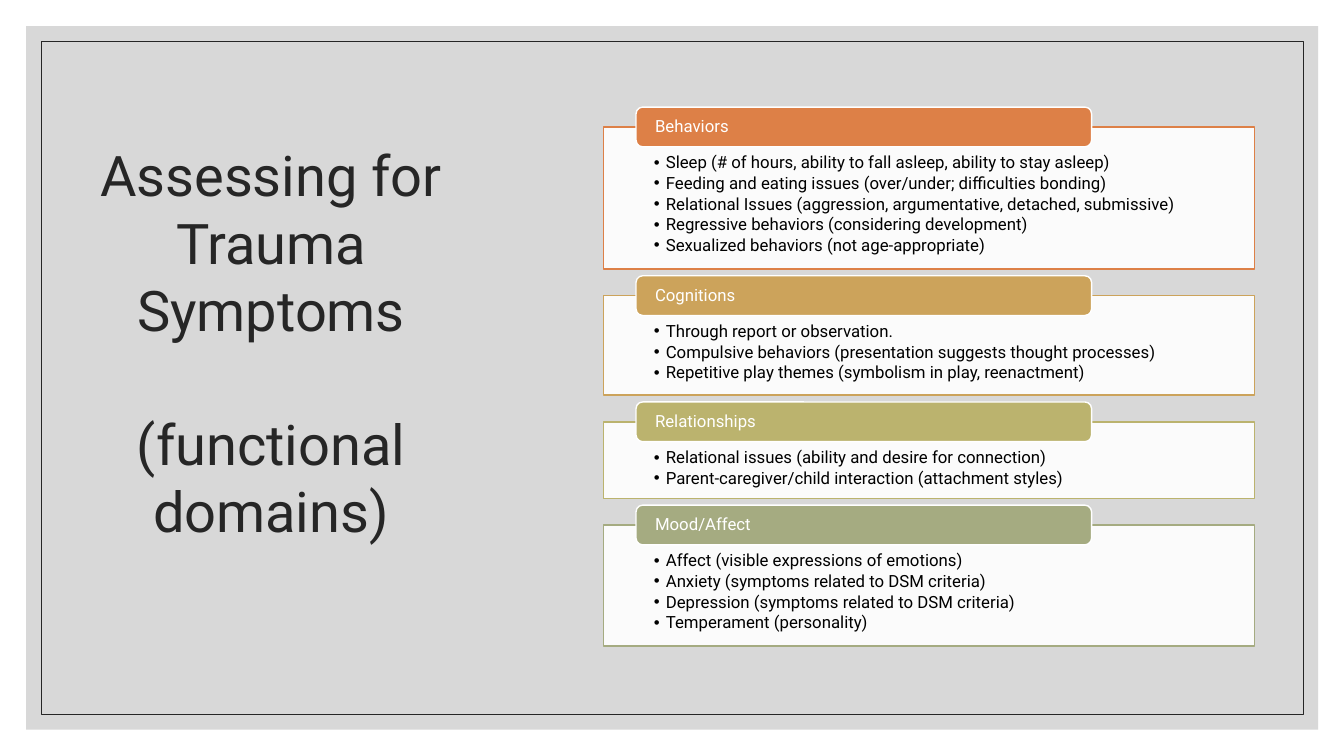
from copy import deepcopy

from lxml import etree
from pptx import Presentation
from pptx.dml.color import RGBColor
from pptx.enum import shapes, text
from pptx.oxml import ns
from pptx.util import Cm, Pt

FONT = "Roboto"
COLORS = {
    "backdrop": "BFBFBF",
    "ink": "262626",
    "body": "000000",
    "white": "FFFFFF",
    "behaviors": "DD8047",
    "cognitions": "CCA35B",
    "relationships": "BBB36E",
    "mood": "A5AB81",
}
TITLE = "Assessing for Trauma Symptoms\v\v(functional domains)\v"
# Heading, colour name, panel height in cm, bullet points
DOMAINS = [
    ("Behaviors", "behaviors", 3.58, [
        "Sleep (# of hours, ability to fall asleep, ability to stay asleep)",
        "Feeding and eating issues (over/under; difficulties bonding)",
        "Relational Issues (aggression, argumentative, detached, submissive)",
        "Regressive behaviors (considering development)",
        "Sexualized behaviors (not age-appropriate)",
    ]),
    ("Cognitions", "cognitions", 2.51, [
        "Through report or observation.",
        "Compulsive behaviors (presentation suggests thought processes)",
        "Repetitive play themes (symbolism in play, reenactment)",
    ]),
    ("Relationships", "relationships", 1.93, [
        "Relational issues (ability and desire for connection)",
        "Parent-caregiver/child interaction (attachment styles)",
    ]),
    ("Mood/Affect", "mood", 3.05, [
        "Affect (visible expressions of emotions)",
        "Anxiety (symptoms related to DSM criteria)",
        "Depression (symptoms related to DSM criteria)",
        "Temperament (personality)",
    ]),
]
FIRST_TOP, PANEL_GAP, TAB_RISE = 3.2, 0.67, 0.5


def color(name):
    return RGBColor.from_string(COLORS[name])


def add_box(page, kind, place, fill=None, opacity=100, line=None, width=1):
    """Add a preset shape; place is left, top, width, height in cm."""
    box = page.shapes.add_shape(kind, *(Cm(length) for length in place))
    box.shadow.inherit = False
    if fill:
        box.fill.solid()
        box.fill.fore_color.rgb = color(fill)
        if opacity < 100:
            tint = box.fill._xPr.find(".//" + ns.qn("a:srgbClr"))
            etree.SubElement(tint, ns.qn("a:alpha"), val=str(opacity * 1000))
    else:
        box.fill.background()
    if line:
        box.line.color.rgb = color(line)
        box.line.width = Pt(width)
    else:
        box.line.fill.background()
    return box


def set_frame(frame, margins, anchor):
    """Margins are left, top, right, bottom in cm."""
    frame.word_wrap = True
    frame.auto_size = text.MSO_AUTO_SIZE.NONE
    frame.vertical_anchor = anchor
    (frame.margin_left, frame.margin_top,
     frame.margin_right, frame.margin_bottom) = (Cm(side) for side in margins)


def format_para(para, size, ink, align, spacing, after=0):
    para.alignment = align
    para.line_spacing = spacing
    para.space_before = Pt(0)
    para.space_after = Pt(after)
    for span in para.runs:
        span.font.name = FONT
        span.font.size = Pt(size)
        span.font.color.rgb = color(ink)


def add_bullet(para):
    props = para._p.get_or_add_pPr()
    props.set("marL", str(Cm(0.3)))
    props.set("indent", str(Cm(-0.3)))
    etree.SubElement(props, ns.qn("a:buFont"), typeface="Arial")
    etree.SubElement(props, ns.qn("a:buChar"), char="•")


def add_backdrop(page):
    rect = shapes.MSO_SHAPE.RECTANGLE
    add_box(page, rect, (0.66, 0.66, 32.56, 17.73), "backdrop", 60)
    add_box(page, rect, (1.04, 1.04, 31.8, 16.97), line="ink", width=0.5)


def set_title(page):
    title = page.shapes.title
    title.left, title.top, title.width, title.height = (
        Cm(1.6), Cm(1.55), Cm(10.46), Cm(15.85))
    frame = title.text_frame
    frame.text = TITLE
    set_frame(frame, (0.25, 0.13, 0.25, 0.13), text.MSO_ANCHOR.MIDDLE)
    para = frame.paragraphs[0]
    format_para(para, 40, "ink", text.PP_ALIGN.CENTER, 1.0)
    # Line breaks take the size of the words around them
    look = para.runs[0].font._rPr
    for line_break in para._p.findall(ns.qn("a:br")):
        line_break.append(deepcopy(look))
    closing = etree.SubElement(para._p, ns.qn("a:endParaRPr"))
    closing.set("sz", "4000")
    closing.extend(deepcopy(child) for child in look)
    # Bring the title in front of the backdrop
    title.element.getparent().append(title.element)


def add_panel(page, top, height, accent, points):
    box = add_box(page, shapes.MSO_SHAPE.RECTANGLE, (15.21, top, 16.41, height),
                  "white", 90, accent)
    set_frame(box.text_frame, (1.27, 0.69, 1.27, 0.23), text.MSO_ANCHOR.TOP)
    box.text_frame.text = "\n".join(points)
    for para in box.text_frame.paragraphs:
        format_para(para, 12, "body", text.PP_ALIGN.LEFT, 0.9, 1.8)
        add_bullet(para)


def add_tab(page, top, heading, accent):
    box = add_box(page, shapes.MSO_SHAPE.ROUNDED_RECTANGLE,
                  (16.03, top, 11.48, 1), accent, line="white")
    set_frame(box.text_frame, (0.43, 0, 0.43, 0), text.MSO_ANCHOR.MIDDLE)
    box.text_frame.text = heading
    format_para(box.text_frame.paragraphs[0], 12, "white",
                text.PP_ALIGN.LEFT, 0.9)


def main():
    deck = Presentation()
    deck.slide_width, deck.slide_height = Cm(33.87), Cm(19.05)
    page = deck.slides.add_slide(deck.slide_layouts.get_by_name("Title Only"))

    add_backdrop(page)
    set_title(page)

    # Functional domains, stacked with equal gaps
    top = FIRST_TOP
    for heading, accent, height, points in DOMAINS:
        add_panel(page, top, height, accent, points)
        add_tab(page, top - TAB_RISE, heading, accent)
        top += height + PANEL_GAP

    deck.save("out.pptx")


if __name__ == "__main__":
    main()
